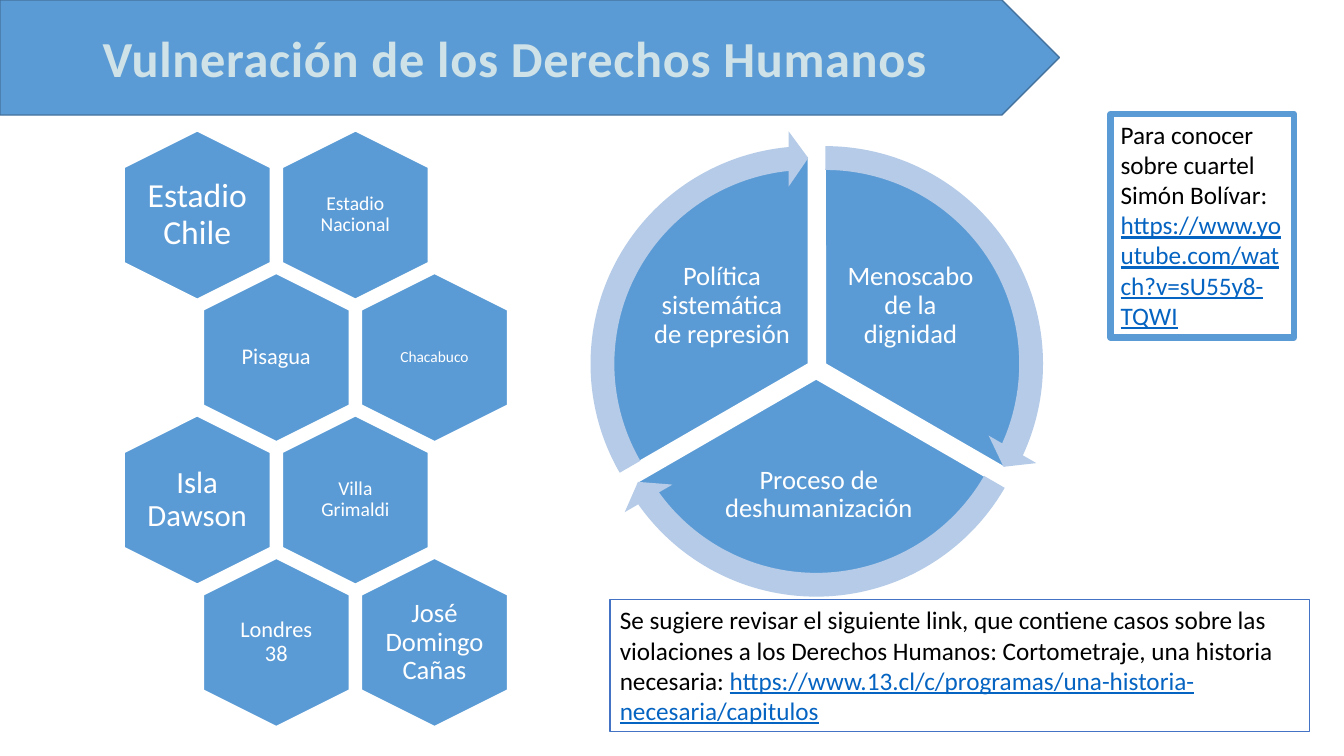
from pptx import Presentation
from pptx.dml.color import RGBColor
from pptx.enum.shapes import MSO_SHAPE
from pptx.enum.text import MSO_ANCHOR, MSO_AUTO_SIZE, PP_ALIGN
from pptx.util import Cm, Pt

BLUE, WHITE, PALE, INK, LINK = "5B9BD5", "FFFFFF", "B5CBE7", "000000", "0563C1"
SITES = [
    [("Estadio Chile", 24, 0), ("Estadio Nacional", 14, 0.15)],
    [("Pisagua", 16, 0.18), ("Chacabuco", 11, 0)],
    [("Isla Dawson", 22, 0), ("Villa Grimaldi", 14, 0.15)],
    [("Londres 38", 16, 0.18), ("José Domingo Cañas", 19, 0)],
]
PARTS = [
    ("Menoscabo de la dignidad", (0.43, 0), (162, 18), (14.725, 161.994),
     (5.51, 2.21, 3.73, 3.12)),
    ("Proceso de deshumanización", (0.2, 0.38), (18, 90), (86.72, 18.005),
     (2.49, 6.78, 5.61, 2.74)),
    ("Política sistemática de represión", (0, 0), (90, 162), (158.73, 90),
     (1.19, 2.21, 3.73, 3.12)),
]


def tint(code):
    """Turn a hex string into a colour."""
    return RGBColor.from_string(code)


def style(item, **vals):
    """Set each named value as an attribute of the item."""
    for name, val in vals.items():
        setattr(item, name, val)


def draw(shapes, kind, box, fill, edge=None, width=1, adj=()):
    """Add a filled preset shape without shadow."""
    shape = shapes.add_shape(kind, *map(Cm, box))
    shape.shadow.inherit = False
    shape.fill.solid()
    shape.fill.fore_color.rgb = tint(fill)
    if edge:
        shape.line.color.rgb = tint(edge)
        shape.line.width = Pt(width)
    else:
        shape.line.fill.background()
    for i, val in enumerate(adj):
        shape.adjustments[i] = val
    return shape


def write(para, text, size, color, **more):
    """Add a run in the slide font."""
    run = para.add_run()
    run.text = text
    style(run.font, name="Calibri", size=Pt(size), **more)
    run.font.color.rgb = tint(color)
    return run


def label(shapes, box, text, size, inset):
    """Add centred white text inside a box."""
    frame = shapes.add_textbox(*map(Cm, box)).text_frame
    sides = ("left", "right", "top", "bottom")
    style(frame, word_wrap=True, vertical_anchor=MSO_ANCHOR.MIDDLE,
          **{f"margin_{side}": Cm(inset) for side in sides})
    para = frame.paragraphs[0]
    style(para, alignment=PP_ALIGN.CENTER, line_spacing=0.9)
    write(para, text, size, WHITE)


def banner(slide, box):
    """Place the title on its arrow-shaped band."""
    left, top, wide, high = box
    band = draw(slide.shapes, MSO_SHAPE.PENTAGON, box, BLUE, "43739E")
    title = slide.shapes.title
    title.element.addprevious(band.element)
    style(title, left=Cm(left), top=Cm(top),
          width=Cm(wide - high / 4), height=Cm(high))
    frame = title.text_frame
    style(frame, word_wrap=True, vertical_anchor=MSO_ANCHOR.MIDDLE,
          auto_size=MSO_AUTO_SIZE.NONE)
    para = frame.paragraphs[0]
    para.alignment = PP_ALIGN.CENTER
    run = write(para, "Vulneración de los Derechos Humanos", 36, "CFE2E7", bold=True)
    run.font._element.set("spc", "50")


def comb(slide, box):
    """Place the staggered hexagons of detention sites."""
    left, top, wide, high = box
    shapes = slide.shapes.add_group_shape().shapes
    tall, slim = 4.24, 3.68
    step = (wide - slim) / 3
    drop = (high - tall) / 3
    for r, row in enumerate(SITES):
        for c, (text, size, inset) in enumerate(row):
            x = left + slim / 2 + (2 * c + r % 2) * step
            y = top + tall / 2 + r * drop
            cell = draw(shapes, MSO_SHAPE.HEXAGON,
                        (x - tall / 2, y - slim / 2, tall, slim), BLUE, WHITE)
            cell.rotation = 90
            label(shapes, (x - 1.27, y - 1.46, 2.54, 2.92), text, size, inset)


def wheel(slide, box):
    """Place the three sectors, their labels and the arrows around them."""
    left, top, size, _ = box
    shapes = slide.shapes.add_group_shape().shapes
    for text, (dx, dy), pie, _, (x, y, wide, high) in PARTS:
        draw(shapes, MSO_SHAPE.PIE, (left + dx, top + dy, size, size),
             BLUE, WHITE, adj=pie)
        label(shapes, (left + dx + x, top + dy + y, wide, high), text, 19, 0.08)
    rim = 0.65
    for _, (dx, dy), _, (end, start), _ in PARTS:
        draw(shapes, MSO_SHAPE.CIRCULAR_ARROW,
             (left + dx - rim, top + dy - rim, size + 2 * rim, size + 2 * rim),
             PALE, adj=(0.051, 3.275, end, start, 0.059))


def note(slide, box, edge, width, text, link):
    """Place a framed note that ends in a web address."""
    frame = draw(slide.shapes, MSO_SHAPE.RECTANGLE, box, WHITE, edge, width).text_frame
    style(frame, word_wrap=True, vertical_anchor=MSO_ANCHOR.TOP,
          auto_size=MSO_AUTO_SIZE.SHAPE_TO_FIT_TEXT)
    para = frame.paragraphs[0]
    para.alignment = PP_ALIGN.LEFT
    write(para, text, 18, INK)
    write(para, link, 18, LINK, underline=True)


def main():
    """Build and save the slide."""
    deck = Presentation()
    style(deck, slide_width=Cm(33.87), slide_height=Cm(19.05))
    slide = deck.slides.add_slide(deck.slide_layouts[5])
    banner(slide, (0, 0, 26.7, 2.9))
    comb(slide, (3.13, 3.3, 9.66, 15.01))
    wheel(slide, (15.14, 3.94, 10.46, 10.46))
    note(slide, (15.37, 15.11, 17.63, 3.33), "4472C4", 1,
         "Se sugiere revisar el siguiente link, que contiene casos sobre las "
         "violaciones a los Derechos Humanos: Cortometraje, una historia necesaria: ",
         "https://www.13.cl/c/programas/una-historia-necesaria/capitulos")
    note(slide, (27.99, 2.87, 4.62, 5.64), BLUE, 4.5,
         "Para conocer sobre cuartel Simón Bolívar: ",
         "https://www.youtube.com/watch?v=sU55y8-TQWI")
    deck.save("out.pptx")


if __name__ == "__main__":
    main()
